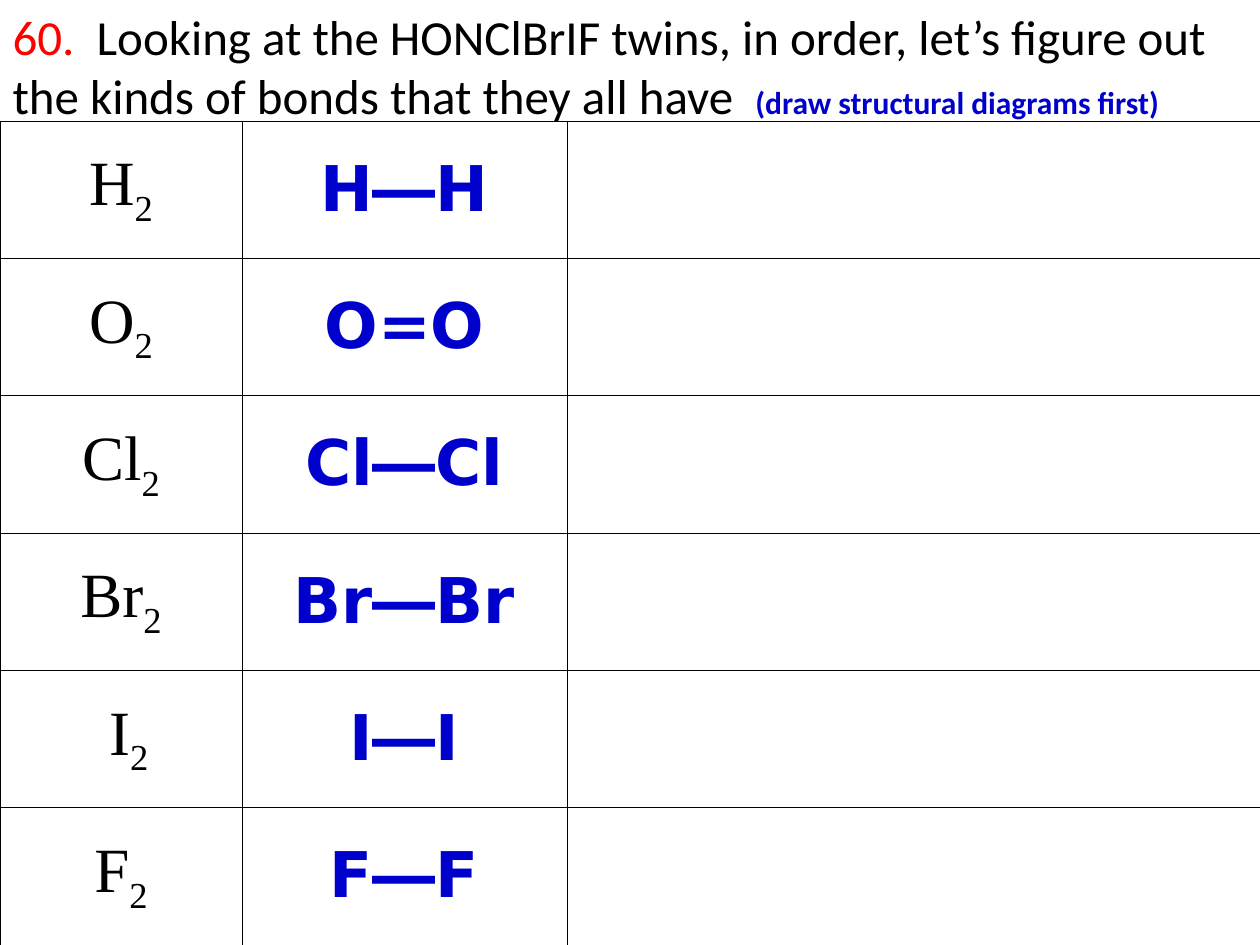
from lxml.etree import SubElement
from pptx import Presentation
from pptx.dml.color import RGBColor
from pptx.enum.text import MSO_ANCHOR, MSO_AUTO_SIZE, PP_ALIGN
from pptx.oxml.ns import qn
from pptx.util import Inches, Pt

BLACK, RED, BLUE = "000000", "FF0000", "0000CC"
TITLE_FONT, FORMULA_FONT, DIAGRAM_FONT = "Calibri", "Times New Roman", "DejaVu Sans"
COLUMN_WIDTHS = (1.92, 2.58, 5.5)
# Element symbol as written in the formula, bond sign
MOLECULES = (("H", "―"), ("O", "="), ("Cl", "―"), ("Br", "―"), (" I", "―"), ("F", "―"))


def color(hex_string):
    return RGBColor.from_string(hex_string)


def add_run(paragraph, text, font, size, hex_string, bold=False, subscript=False):
    run = paragraph.add_run()
    run.text = text
    run.font.name = font
    run.font.size = Pt(size)
    run.font.bold = bold
    run.font.color.rgb = color(hex_string)
    if subscript:
        run._r.get_or_add_rPr().set("baseline", "-25000")


def add_borders(cell, hex_string, width):
    properties = cell._tc.get_or_add_tcPr()
    for side in ("lnL", "lnR", "lnT", "lnB"):
        line = SubElement(properties, qn(f"a:{side}"), w=str(Pt(width)))
        fill = SubElement(line, qn("a:solidFill"))
        SubElement(fill, qn("a:srgbClr"), val=hex_string)


def place_title(slide, left, top, width, height):
    title = slide.shapes.title
    title.left, title.top = Inches(left), Inches(top)
    title.width, title.height = Inches(width), Inches(height)
    frame = title.text_frame
    frame.word_wrap = True
    frame.auto_size = MSO_AUTO_SIZE.NONE
    frame.vertical_anchor = MSO_ANCHOR.TOP
    paragraph = frame.paragraphs[0]
    paragraph.alignment = PP_ALIGN.LEFT
    add_run(paragraph, "60.", TITLE_FONT, 28, RED)
    add_run(paragraph, "  Looking at the HONClBrIF twins, in order, let’s figure out "
            "the kinds of bonds that they all have  ", TITLE_FONT, 28, BLACK)
    add_run(paragraph, "(draw structural diagrams first)", TITLE_FONT, 18, BLUE, bold=True)


def add_bond_table(slide, left, top, width, height):
    table = slide.shapes.add_table(
        len(MOLECULES), len(COLUMN_WIDTHS),
        Inches(left), Inches(top), Inches(width), Inches(height)).table
    table.first_row = table.horz_banding = False
    for column, column_width in zip(table.columns, COLUMN_WIDTHS):
        column.width = Inches(column_width)

    # Plain cells with thin rules
    for cell in table.iter_cells():
        add_borders(cell, BLACK, 0.25)
        cell.fill.background()
        cell.vertical_anchor = MSO_ANCHOR.MIDDLE
        cell.text_frame.paragraphs[0].alignment = PP_ALIGN.CENTER

    # Formula and structural diagram; the last column stays open for answers
    for row, (symbol, bond) in enumerate(MOLECULES):
        formula, diagram = (table.cell(row, column).text_frame.paragraphs[0]
                            for column in range(2))
        add_run(formula, symbol, FORMULA_FONT, 36, BLACK)
        add_run(formula, "2", FORMULA_FONT, 36, BLACK, subscript=True)
        atom = symbol.strip()
        add_run(diagram, f"{atom}{bond}{atom}", DIAGRAM_FONT, 36, BLUE, bold=True)


def main():
    presentation = Presentation()
    presentation.slide_width, presentation.slide_height = Inches(10), Inches(7.5)
    slide = presentation.slides.add_slide(presentation.slide_layouts[5])
    place_title(slide, 0, 0, 10, 0.96)
    add_bond_table(slide, 0, 0.96, 10, 6.54)
    presentation.save("out.pptx")


if __name__ == "__main__":
    main()
